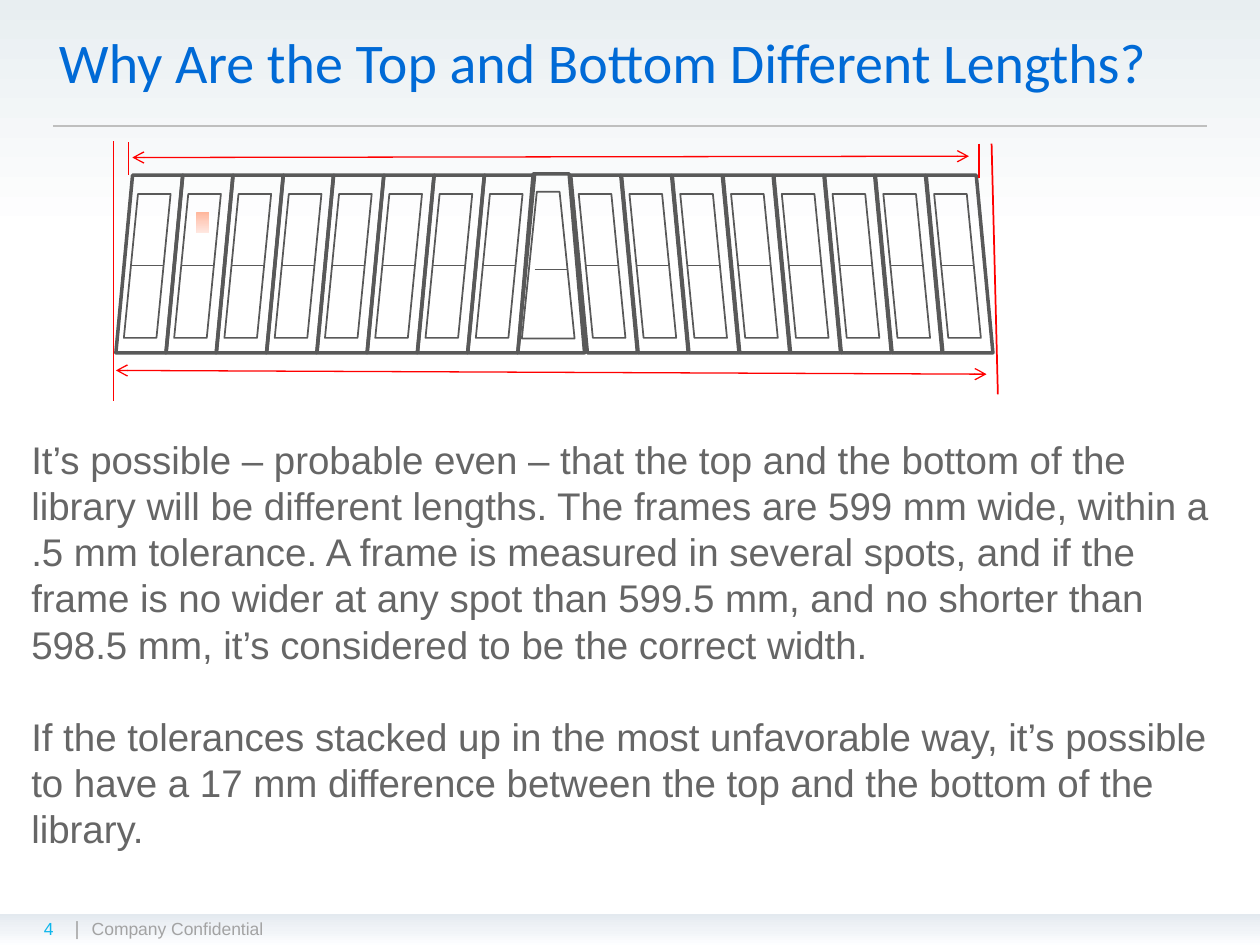
import collections

import lxml.etree
import pptx
import pptx.dml.color
import pptx.enum.dml
import pptx.enum.shapes
import pptx.oxml.ns
import pptx.util

SHAPES = pptx.enum.shapes.MSO_SHAPE
COLUMNS, ROWS = 100, 75  # grid over the whole page
CELL = 0.1  # inches
GREY, RED = "595959", "FF0000"
BODY = [
    "It’s possible – probable even – that the top and the bottom of the library will be "
    "different lengths. The frames are 599 mm wide, within a .5 mm tolerance. A frame is "
    "measured in several spots, and if the frame is no wider at any spot than 599.5 mm, and "
    "no shorter than 598.5 mm, it’s considered to be the correct width.",
    "If the tolerances stacked up in the most unfavorable way, it’s possible to have a 17 mm "
    "difference between the top and the bottom of the library.",
]
Style = collections.namedtuple("Style", "preset outer_slant inner_slant inner bar")
SLANTED = Style(SHAPES.PARALLELOGRAM, 0.25, 0.302, (0.12, 0.106, 0.7, 0.81), (0.23, 0.72, 0.51))
CENTRE = Style(SHAPES.TRAPEZOID, 0.231, 0.285, (0.06, 0.1, 0.79, 0.82), (0.25, 0.74, 0.535))


class Box(collections.namedtuple("Box", "left top width height")):
    """A rectangle in grid columns and rows."""

    def offset(self, columns, rows, width, height):
        return Box(self.left + columns, self.top + rows, width, height)

    def share(self, x, y, width, height):
        return self.offset(x * self.width, y * self.height, width * self.width, height * self.height)

    def point(self, columns, rows):
        return self.left + columns, self.top + rows


def grid(cells):
    return pptx.util.Inches(cells * CELL)


def color(value):
    return pptx.dml.color.RGBColor.from_string(value)


def add_text(page, box, paragraphs, size=10, font="Arial", fill="A3A3A3", leading=None, gap=0):
    frame = page.shapes.add_textbox(*map(grid, box)).text_frame
    frame.word_wrap = True
    for index, text in enumerate(paragraphs):
        para = frame.paragraphs[0] if index == 0 else frame.add_paragraph()
        if leading:
            para.line_spacing = pptx.util.Pt(leading)
        if index:
            para.space_before = pptx.util.Pt(gap)
        span = para.add_run()
        span.text = text
        span.font.size = pptx.util.Pt(size)
        span.font.name = font
        span.font.color.rgb = color(fill)


def add_gradient(page, box, stops):
    shape = page.shapes.add_shape(SHAPES.RECTANGLE, *map(grid, box))
    shape.shadow.inherit = False
    shape.line.fill.background()
    shape.fill.gradient()
    shape.fill.gradient_angle = 270
    name = pptx.oxml.ns.qn
    stop_list = shape._element.spPr.find(".//" + name("a:gsLst"))
    for old in list(stop_list):
        stop_list.remove(old)
    for position, value in stops:
        stop = lxml.etree.SubElement(stop_list, name("a:gs"), pos=str(position * 1000))
        lxml.etree.SubElement(stop, name("a:srgbClr"), val=value)


def add_outline(page, box, preset, slant, width, mirrored):
    shape = page.shapes.add_shape(preset, *map(grid, box))
    shape.shadow.inherit = False
    shape.fill.background()
    shape.line.color.rgb = color(GREY)
    shape.line.width = pptx.util.Pt(width)
    shape.adjustments[0] = slant
    if mirrored:
        shape._element.spPr.xfrm.set("flipH", "1")


def add_line(page, start, end, stroke, width=0.75, arrows=False):
    line = page.shapes.add_connector(
        pptx.enum.shapes.MSO_CONNECTOR.STRAIGHT, *map(grid, (*start, *end)))
    line.line.color.rgb = color(stroke)
    line.line.width = pptx.util.Pt(width)
    name = pptx.oxml.ns.qn
    if arrows:
        for end_name in ("a:headEnd", "a:tailEnd"):
            lxml.etree.SubElement(line.line._get_or_add_ln(), name(end_name), type="arrow")
    lxml.etree.SubElement(line._element.spPr, name("a:effectLst"))


def draw_background(page, box):
    add_gradient(page, box, [(0, "E8EEF1"), (25, "FFFFFF")])


def draw_footer(page, box):
    add_gradient(page, box, [(0, "E3E9EF"), (50, "F0F3F7"), (100, "FDFEFF")])
    add_text(page, box.offset(6.3, -0.1, 50, 2.6), ["Company Confidential"])
    add_text(page, box.offset(5, -0.3, 1.9, 2.7), ["|"], size=11)
    add_text(page, box.offset(2.5, -0.1, 5.1, 2.6), ["4"], fill="0DB6EC")


def draw_header(page, box):
    add_line(page, box.point(4.2, box.height), box.point(95.8, box.height), "BFBFBF")
    add_text(page, box.offset(3.7, 1.7, 96.3, 6.4),
             ["Why Are the Top and Bottom Different Lengths?"],
             size=32, font="Calibri", fill="006AD6")


def draw_frame(page, box, style, mirrored=False):
    add_outline(page, box, style.preset, style.outer_slant, 2, mirrored)
    add_outline(page, box.share(*style.inner), style.preset, style.inner_slant, 1, mirrored)
    start, end, height = style.bar
    y = height * box.height
    add_line(page, box.point(start * box.width, y), box.point(end * box.width, y), GREY)


def draw_library(page, box):
    # Eight frames lean each way around the centre one
    for index in range(8):
        draw_frame(page, box.offset(0.2 + 3.99 * index, 2.7, 5.3, 14.1), SLANTED)
    for index in range(8):
        draw_frame(page, box.offset(36.3 + 4.03 * index, 2.7, 5.3, 14.1), SLANTED, mirrored=True)
    add_gradient(page, box.offset(6.6, 5.6, 1, 1.7),
                 [(0, "FFB599"), (50, "FFD0C1"), (100, "FFE8E1")])
    draw_frame(page, box.offset(32.1, 2.6, 5.3, 14.2), CENTRE)

    # Top and bottom lengths
    for start, end in [((1.5, 1.3), (67.9, 1.2)), ((0.2, 18.2), (69.3, 18.5))]:
        add_line(page, box.point(*start), box.point(*end), RED, arrows=True)

    # Extension lines at the ends of both lengths
    for start, end in [((68.7, 0.2), (68.7, 2.9)), ((69.7, 0.2), (70.2, 20.1)),
                       ((0, 0), (0, 20.6)), ((1.2, 0.1), (1.2, 2.7))]:
        add_line(page, box.point(*start), box.point(*end), RED, width=1)


def draw_body(page, box):
    add_text(page, box, BODY, size=22, fill="666666", leading=26.4, gap=26.4)


def main():
    deck = pptx.Presentation()
    deck.slide_width, deck.slide_height = grid(COLUMNS), grid(ROWS)
    page = deck.slides.add_slide(deck.slide_layouts[6])
    draw_background(page, Box(0, 0, COLUMNS, ROWS))
    draw_footer(page, Box(0, 72.5, COLUMNS, 2.5))
    draw_header(page, Box(0, 0, COLUMNS, 10))
    draw_body(page, Box(1.5, 34.1, 97.3, 34.5))
    draw_library(page, Box(9, 11.2, 70.2, 20.6))
    deck.save("out.pptx")


if __name__ == "__main__":
    main()
